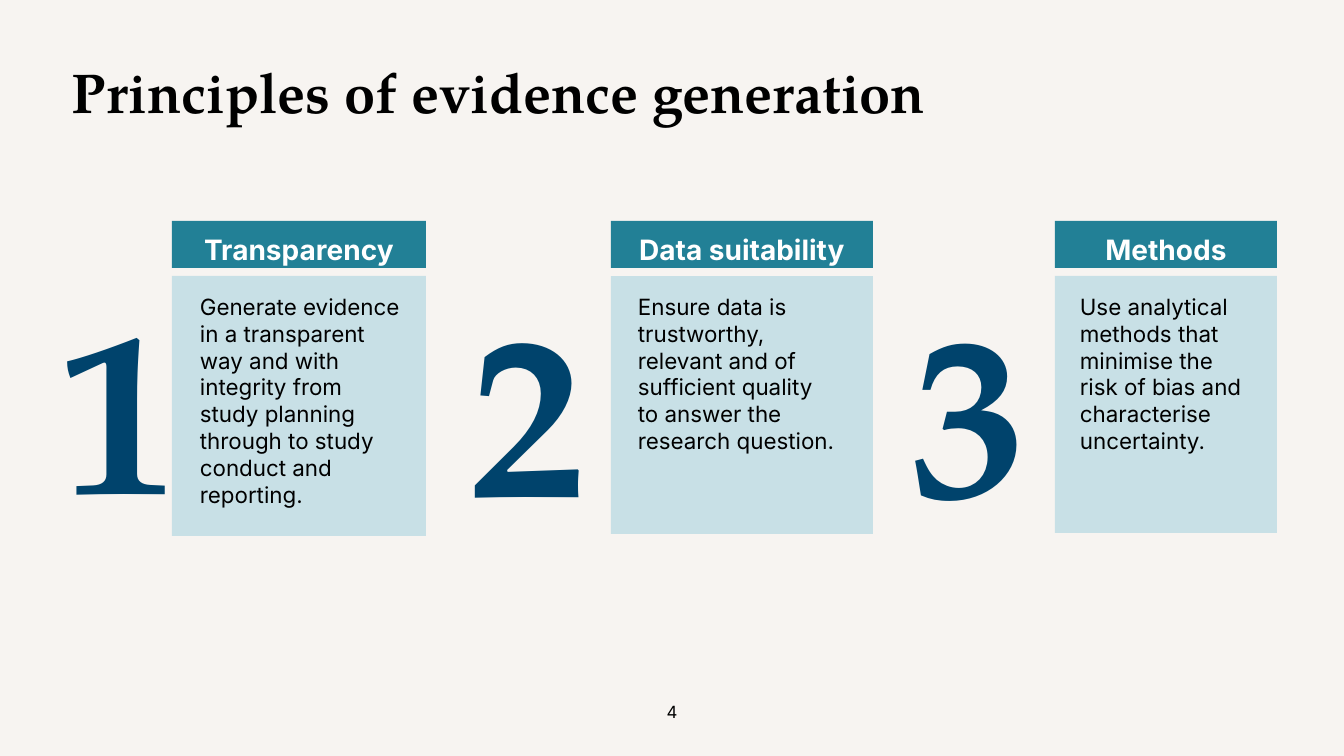
import pptx
import pptx.util
import pptx.dml.color
import pptx.enum.shapes
import pptx.enum.text

TITLE = "Principles of evidence generation"
PAGE_NUMBER = "4"
PRINCIPLES = [
    {
        "heading": "Transparency",
        "detail": "Generate evidence in a transparent way and with integrity from "
                  "study planning through to study conduct and reporting.",
        "card": (172, 254, 260),
        "numeral": (50, 257, 224),
        "detail_span": (190, 223),
    },
    {
        "heading": "Data suitability",
        "detail": "Ensure data is trustworthy, relevant and of sufficient quality "
                  "to answer the research question.",
        "card": (611, 262, 258),
        "numeral": (460, 260, 204),
        "detail_span": (628, 220),
    },
    {
        "heading": "Methods",
        "detail": "Use analytical methods that minimise the risk of bias and "
                  "characterise uncertainty.",
        "card": (1055, 222, 257),
        "numeral": (901, 260, 204),
        "detail_span": (1070, 186),
    },
]

THEME = {
    "background": "F7F4F1",
    "heading_fill": "228096",
    "card_fill": "C8E0E6",
    "title": ("TeX Gyre Pagella", 40, "000000", True),
    "numeral": ("TeX Gyre Pagella", 166, "00436C", True),
    "heading": ("Inter", 20, "FFFFFF", True),
    "detail": ("Inter", 16, "000000", False),
    "page": ("Inter", 12, "000000", False),
}

SLIDE_WIDTH, SLIDE_HEIGHT = 1344, 756
HEADING_TOP, HEADING_HEIGHT = 221, 47
CARD_GAP = 8
CARD_TOP = HEADING_TOP + HEADING_HEIGHT + CARD_GAP
DETAIL_TOP = CARD_TOP + 12
NUMERAL_HEIGHT = 291
EMU_PER_PX = 914400 / 100.8


def emu(px):
    return pptx.util.Emu(round(px * EMU_PER_PX))


def color(code):
    return pptx.dml.color.RGBColor.from_string(code)


def write(part, text, style, centred=False, line_spacing=None):
    font_name, size, ink, bold = THEME[style]
    frame = part.text_frame
    frame.word_wrap = True
    frame.vertical_anchor = pptx.enum.text.MSO_ANCHOR.TOP
    paragraph = frame.paragraphs[0]
    align = pptx.enum.text.PP_ALIGN
    paragraph.alignment = align.CENTER if centred else align.LEFT
    if line_spacing:
        paragraph.line_spacing = line_spacing
    run = paragraph.add_run()
    run.text = text
    run.font.name = font_name
    run.font.size = pptx.util.Pt(size)
    run.font.bold = bold
    run.font.color.rgb = color(ink)


def add_text(slide, box, text, style, **layout):
    part = slide.shapes.add_textbox(*map(emu, box))
    write(part, text, style, **layout)


def add_block(slide, box, fill):
    block = slide.shapes.add_shape(
        pptx.enum.shapes.MSO_SHAPE.RECTANGLE, *map(emu, box))
    block.shadow.inherit = False
    block.fill.solid()
    block.fill.fore_color.rgb = color(THEME[fill])
    block.line.fill.background()
    return block


def add_principle(slide, number, principle):
    left, width, height = principle["card"]
    numeral_left, numeral_top, numeral_width = principle["numeral"]
    detail_left, detail_width = principle["detail_span"]
    heading = add_block(
        slide, (left, HEADING_TOP, width, HEADING_HEIGHT), "heading_fill")
    write(heading, principle["heading"], "heading", centred=True, line_spacing=1.2)
    add_block(slide, (left, CARD_TOP, width, height), "card_fill")
    add_text(slide, (numeral_left, numeral_top, numeral_width, NUMERAL_HEIGHT),
             str(number), "numeral")
    add_text(slide, (detail_left, DETAIL_TOP, detail_width, height - 32),
             principle["detail"], "detail")


def main():
    deck = pptx.Presentation()
    deck.slide_width, deck.slide_height = emu(SLIDE_WIDTH), emu(SLIDE_HEIGHT)
    slide = deck.slides.add_slide(deck.slide_layouts[6])
    slide.background.fill.solid()
    slide.background.fill.fore_color.rgb = color(THEME["background"])
    add_text(slide, (62, 60, 1232, 128), TITLE, "title", line_spacing=0.9)
    for number, principle in enumerate(PRINCIPLES, start=1):
        add_principle(slide, number, principle)
    add_text(slide, (521, 697, 302, 40), PAGE_NUMBER, "page", centred=True)
    deck.save("out.pptx")


if __name__ == "__main__":
    main()
